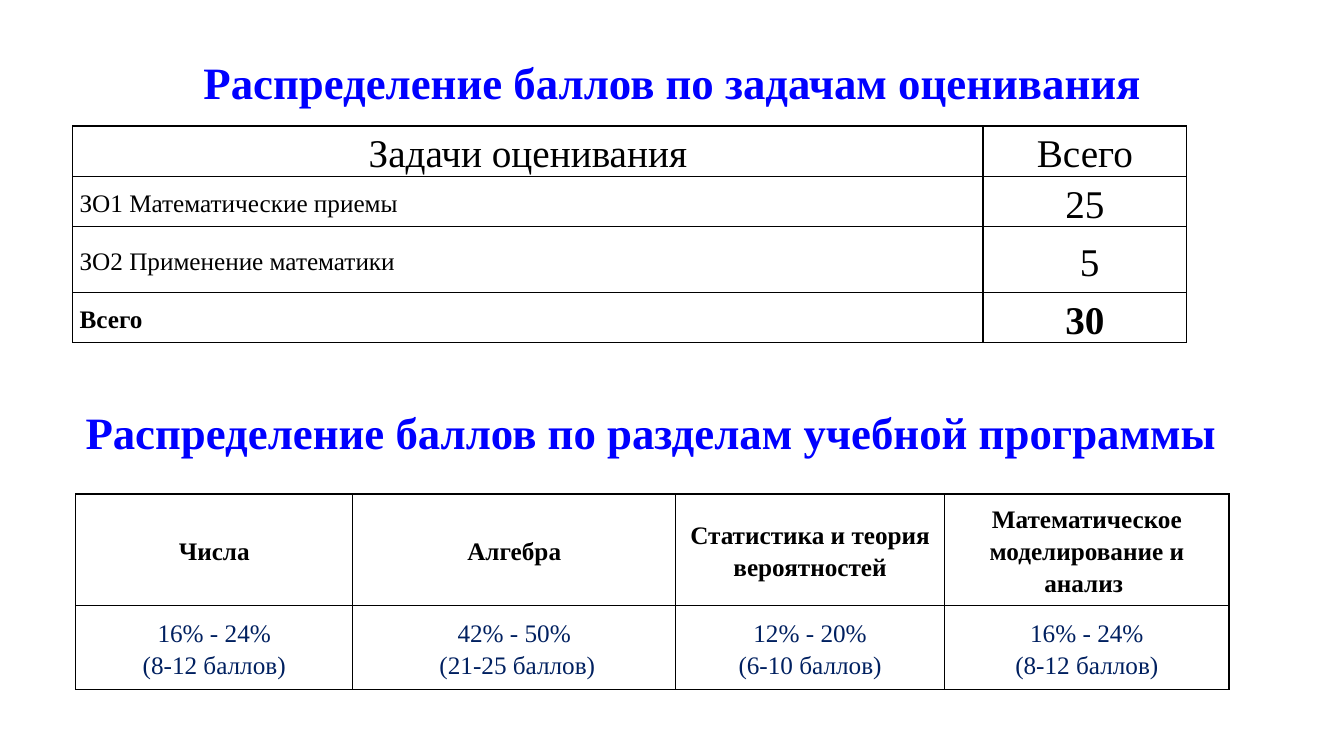
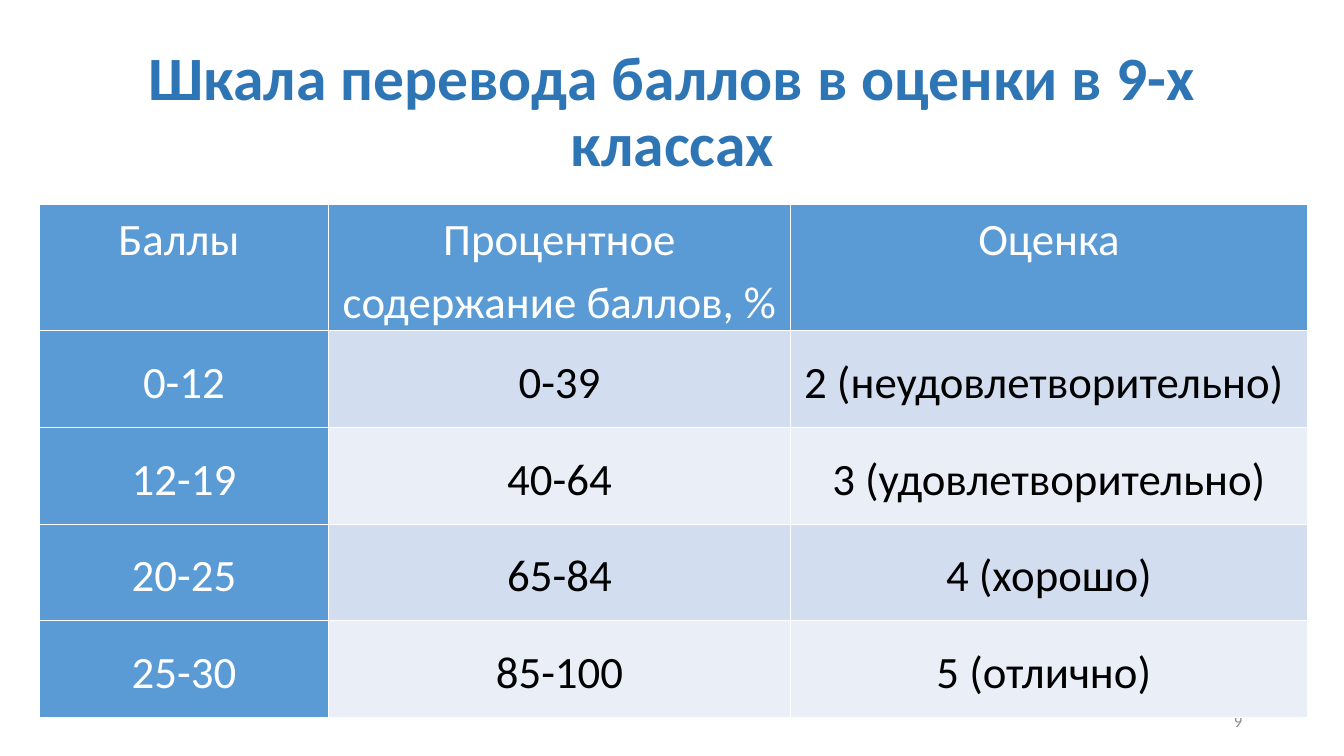
import pptx
import pptx.util
import pptx.dml.color
import pptx.enum.text
import pptx.oxml.ns
from lxml import etree

PX = 9144  # 100 px to the inch
COLOURS = {
    "white": "FFFFFF", "black": "000000", "bright_blue": "0000FF",
    "navy": "002060", "title_blue": "2E75B6", "head_blue": "5B9BD5",
    "band_dark": "D2DEEF", "band_light": "EAEFF7", "grey": "8C8C8C",
}
SERIF, SANS = "Times New Roman", "Calibri"
ALIGN = pptx.enum.text.PP_ALIGN
ANCHOR = pptx.enum.text.MSO_ANCHOR

TASKS = [
    ("Задачи оценивания", "Всего"),
    ("ЗO1 Математические приемы", "25"),
    ("ЗO2 Применение математики", " 5"),
    ("Всего", "30"),
]
SECTIONS = [
    ("Числа", "Алгебра", "Статистика и теория вероятностей",
     "Математическое моделирование и анализ "),
    ("16% - 24%\n(8-12 баллов)", "42% - 50%\n (21-25 баллов)",
     "12% - 20%\n(6-10 баллов)", "16% - 24%\n(8-12 баллов)"),
]
GRADES = [
    ("Баллы ", "Процентное содержание баллов, %", "Оценка"),
    ("0-12", "0-39", "2 (неудовлетворительно) "),
    ("12-19", "40-64", "3 (удовлетворительно)"),
    ("20-25", "65-84", "4 (хорошо)"),
    ("25-30", "85-100", "5 (отлично) "),
]


def px(length):
    return pptx.util.Emu(length * PX)


def rgb(colour):
    return pptx.dml.color.RGBColor.from_string(COLOURS[colour])


def write(frame, text, font, size, colour="black", bold=False,
          align=ALIGN.CENTER, spacing=1.0):
    frame.text = text
    for para in frame.paragraphs:
        para.alignment = align
        para.line_spacing = spacing
        for span in para.runs:
            span.font.name = font
            span.font.size = pptx.util.Pt(size)
            span.font.bold = bold
            span.font.color.rgb = rgb(colour)


def set_title(page, top, text, font, size, colour):
    title = page.shapes.title
    title.left, title.top, title.width, title.height = map(px, (92, top, 1150, 145))
    frame = title.text_frame
    frame.auto_size = pptx.enum.text.MSO_AUTO_SIZE.NONE
    frame.vertical_anchor = ANCHOR.MIDDLE
    write(frame, text, font, size, colour, bold=True, spacing=0.9)


def add_text(page, place, text, font, size, colour, anchor=ANCHOR.TOP, **style):
    box = page.shapes.add_textbox(*map(px, place))
    box.text_frame.word_wrap = True
    box.text_frame.vertical_anchor = anchor
    write(box.text_frame, text, font, size, colour, **style)


def set_borders(cell, colour):
    properties = cell._tc.get_or_add_tcPr()
    for side in ("a:lnL", "a:lnR", "a:lnT", "a:lnB"):
        line = etree.SubElement(properties, pptx.oxml.ns.qn(side), w="12700")
        fill = etree.SubElement(line, pptx.oxml.ns.qn("a:solidFill"))
        etree.SubElement(fill, pptx.oxml.ns.qn("a:srgbClr"), val=COLOURS[colour])


def add_grid(page, left, top, widths, heights, rows, border, look):
    """Add a table; look(row, column) gives fill, anchor and text style of a cell."""
    table = page.shapes.add_table(
        len(heights), len(widths), px(left), px(top),
        px(sum(widths)), px(sum(heights))).table
    table.first_row = table.horz_banding = False
    for column, width in zip(table.columns, widths):
        column.width = px(width)
    for row, height in zip(table.rows, heights):
        row.height = px(height)
    for row, texts in enumerate(rows):
        for column, text in enumerate(texts):
            cell = table.cell(row, column)
            style = look(row, column)
            fill = style.pop("fill", None)
            cell.vertical_anchor = style.pop("anchor", ANCHOR.MIDDLE)
            cell.margin_left = cell.margin_right = px(7)
            cell.margin_top = cell.margin_bottom = 0
            set_borders(cell, border)
            if fill:
                cell.fill.solid()
                cell.fill.fore_color.rgb = rgb(fill)
            else:
                cell.fill.background()
            write(cell.text_frame, text, spacing=1.15, **style)


def task_look(row, column):
    label = row > 0 and column == 0
    return {"font": SERIF, "size": 18 if label else 28,
            "bold": row == len(TASKS) - 1,
            "align": ALIGN.LEFT if label else ALIGN.CENTER}


def section_look(row, column):
    return {"font": SERIF, "size": 18, "bold": row == 0,
            "colour": "navy" if row else "black"}


def grade_look(row, column):
    header = row == 0 or column == 0
    band = "band_dark" if row % 2 else "band_light"
    return {"font": SANS, "size": 32,
            "colour": "white" if header else "black",
            "fill": "head_blue" if header else band,
            "anchor": ANCHOR.MIDDLE if row else ANCHOR.TOP}


def add_distribution(page):
    set_title(page, 12, "Распределение баллов по задачам оценивания",
              SERIF, 32, "bright_blue")
    add_grid(page, 72, 125, (903, 202), (50, 50, 65, 50), TASKS, "black", task_look)
    add_text(page, (75, 397, 1190, 94),
             "Распределение баллов по разделам учебной программы",
             SERIF, 32, "bright_blue", bold=True, align=ALIGN.LEFT)
    add_grid(page, 75, 490, (275, 320, 267, 282), (111, 83), SECTIONS,
             "black", section_look)


def add_grade_scale(page):
    set_title(page, 40, "Шкала перевода баллов в оценки в 9-х классах",
              SANS, 44, "title_blue")
    add_text(page, (942, 695, 300, 40), "9", SANS, 12, "grey",
             anchor=ANCHOR.MIDDLE, align=ALIGN.RIGHT)
    add_grid(page, 39, 203, (287, 458, 513), (125, 96, 96, 96, 96), GRADES,
             "white", grade_look)


def main():
    deck = pptx.Presentation()
    deck.slide_width, deck.slide_height = px(1333), px(750)
    title_only = deck.slide_layouts[5]
    for build in (add_distribution, add_grade_scale):
        build(deck.slides.add_slide(title_only))
    deck.save("out.pptx")


if __name__ == "__main__":
    main()
